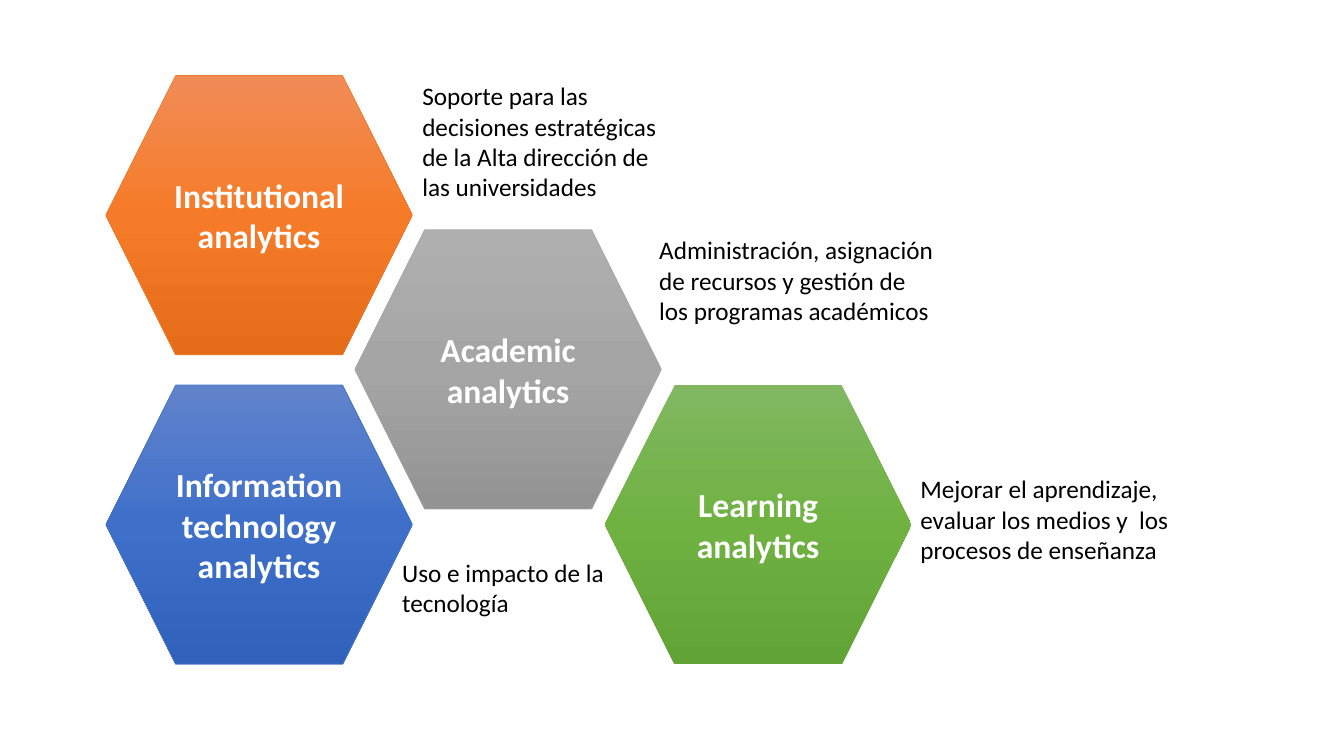
from copy import deepcopy
from dataclasses import dataclass

from pptx import Presentation
from pptx.dml.color import RGBColor as Rgb
from pptx.enum.shapes import MSO_SHAPE as Preset
from pptx.enum.text import MSO_ANCHOR as Anchor, MSO_AUTO_SIZE as AutoSize, PP_ALIGN as Align
from pptx.oxml.ns import qn
from pptx.util import Pt

PX = 9144  # EMU per px, 100 px to the inch


@dataclass(frozen=True)
class Theme:
    font: str = "Calibri"
    heading_size: int = 24
    note_size: int = 18
    heading_color: str = "FFFFFF"
    note_color: str = "000000"
    # Gradient from top to bottom, then the outline
    orange: tuple = ("F18C57", "F67B28", "E56C19", "ED7D31")
    gray: tuple = ("AFAFAF", "A5A5A5", "939393", "A5A5A5")
    blue: tuple = ("6183CB", "3E70CA", "3062BB", "4472C4")
    green: tuple = ("81B861", "6FB242", "62A336", None)


def write_text(frame, text, *, font, size, color, bold=False, align=Align.LEFT, anchor=Anchor.TOP):
    """Fill a text frame, one paragraph per line of text."""
    frame.word_wrap = True
    frame.vertical_anchor = anchor
    frame.text = text
    for paragraph in frame.paragraphs:
        paragraph.alignment = align
        for run in paragraph.runs:
            run.font.name = font
            run.font.size = Pt(size)
            run.font.bold = bold
            run.font.color.rgb = Rgb.from_string(color)


class SlideBuilder:
    def __init__(self, slide, theme):
        self.slide = slide
        self.theme = theme

    def hexagon(self, text, left, top, width, height, palette):
        *shades, outline = palette
        cell = self.slide.shapes.add_shape(
            Preset.HEXAGON, left * PX, top * PX, width * PX, height * PX)
        cell.shadow.inherit = False
        self.gradient(cell, shades)
        if outline:
            cell.line.color.rgb = Rgb.from_string(outline)
            cell.line.width = Pt(0.5)
        else:
            cell.line.fill.background()
        write_text(cell.text_frame, text, font=self.theme.font, size=self.theme.heading_size,
                   color=self.theme.heading_color, bold=True,
                   align=Align.CENTER, anchor=Anchor.MIDDLE)

    def gradient(self, cell, shades):
        cell.fill.gradient()
        cell.fill.gradient_angle = 270
        # The default gradient has two stops; add one more
        stop_list = cell._element.spPr.find(qn("a:gradFill")).find(qn("a:gsLst"))
        stop_list.append(deepcopy(stop_list[0]))
        for index, shade in enumerate(shades):
            stop = cell.fill.gradient_stops[index]
            stop.position = index / (len(shades) - 1)
            stop.color.rgb = Rgb.from_string(shade)

    def note(self, text, left, top, width, height):
        box = self.slide.shapes.add_textbox(left * PX, top * PX, width * PX, height * PX)
        write_text(box.text_frame, text, font=self.theme.font, size=self.theme.note_size,
                   color=self.theme.note_color)
        box.text_frame.auto_size = AutoSize.SHAPE_TO_FIT_TEXT


def main():
    deck = Presentation()
    deck.slide_width, deck.slide_height = 1333 * PX, 750 * PX
    theme = Theme()
    builder = SlideBuilder(deck.slides.add_slide(deck.slide_layouts[6]), theme)

    # Honeycomb: columns and rows are counted in half steps
    left_edge, top_edge = 105, 75
    cell_width, cell_height = 304, 277
    two_columns, two_rows = 495, 307

    # Heading, column, row, palette, note, note box
    levels = [
        ("Institutional analytics", 0, 0, theme.orange,
         "Soporte para las decisiones estratégicas de la Alta dirección de las universidades",
         (409, 75, 253, 131)),
        ("Academic\nanalytics", 1, 1, theme.gray,
         "Administración, asignación de recursos y gestión de los programas académicos",
         (644, 228, 293, 101)),
        ("Information technology\nanalytics", 0, 2, theme.blue,
         "Uso e impacto de la tecnología",
         (389, 548, 293, 71)),
        ("Learning\nanalytics", 2, 2, theme.green,
         "Mejorar el aprendizaje, evaluar los medios y  los procesos de enseñanza",
         (903, 465, 293, 101)),
    ]
    for heading, column, row, palette, note, note_box in levels:
        builder.hexagon(heading, left_edge + column * two_columns // 2,
                        top_edge + row * two_rows // 2, cell_width, cell_height, palette)
        builder.note(note, *note_box)

    deck.save("out.pptx")


if __name__ == "__main__":
    main()
